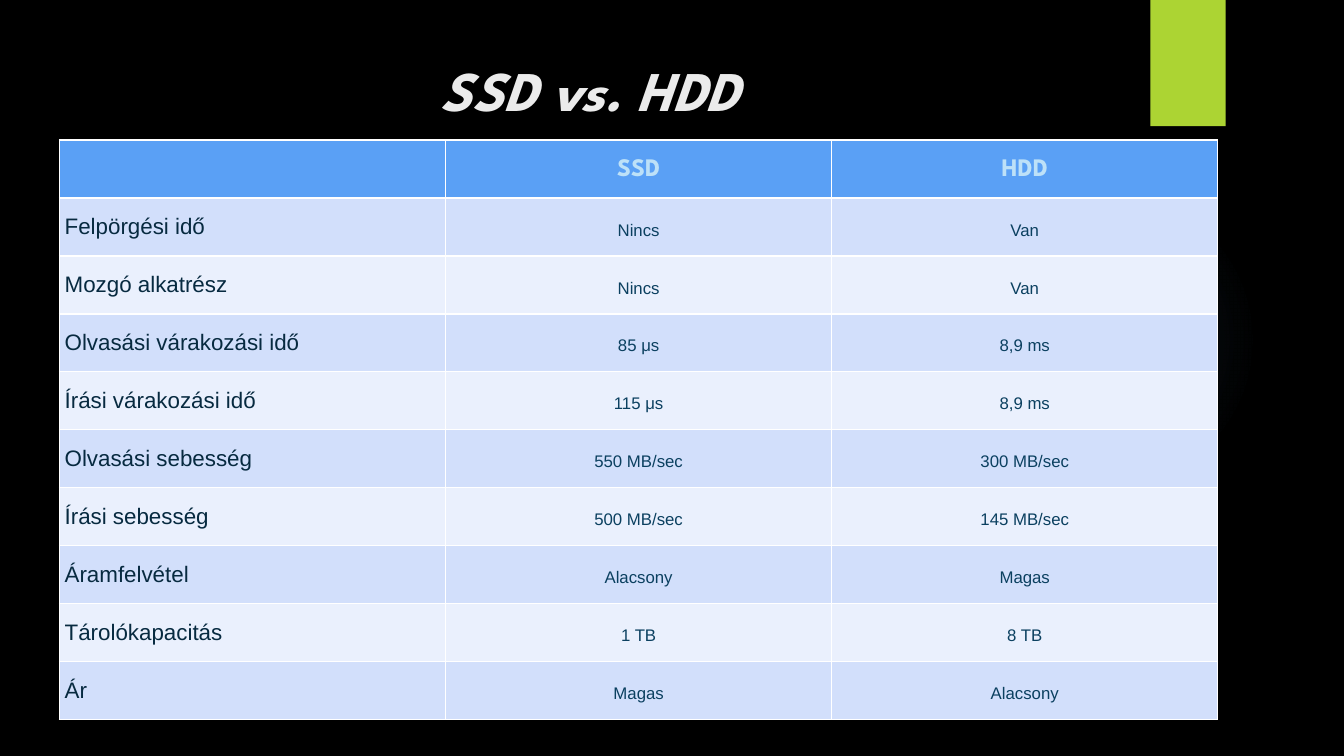
"""Build a slide comparing SSD and HDD drives in a table."""
from lxml import etree
from pptx import Presentation
from pptx.dml.color import RGBColor
from pptx.enum import shapes, text
from pptx.oxml import ns
from pptx.util import Cm, Pt

TITLE = "SSD vs. HDD"
HEADINGS = ("", "SSD", "HDD")
COMPARISON = [
    ("Felpörgési idő", "Nincs", "Van"),
    ("Mozgó alkatrész", "Nincs", "Van"),
    ("Olvasási várakozási idő", "85 μs", "8,9 ms"),
    ("Írási várakozási idő", "115 μs", "8,9 ms"),
    ("Olvasási sebesség", "550 MB/sec", "300 MB/sec"),
    ("Írási sebesség", "500 MB/sec", "145 MB/sec"),
    ("Áramfelvétel", "Alacsony", "Magas"),
    ("Tárolókapacitás", "1 TB", "8 TB"),
    ("Ár", "Magas", "Alacsony"),
]
GLOW_STOPS = [(0, 7), (36, 6), (69, 0)]
BANDS = ("D2DFFB", "EAF0FD")
COLUMN_WIDTH, ROW_HEIGHT, CELL_INSET = Cm(9.73), Cm(1.46), Cm(0.13)


def paint(fill, color):
    """Fill with one solid colour."""
    fill.solid()
    fill.fore_color.rgb = RGBColor.from_string(color)


def write(frame, words, *, size, color, font="Arial", bold=False, italic=False,
          align=text.PP_ALIGN.CENTER, spacing=None):
    """Put formatted text into a text frame."""
    paragraph = frame.paragraphs[0]
    paragraph.alignment = align
    paragraph.line_spacing = spacing
    run = paragraph.add_run()
    run.text = words
    run.font.name, run.font.size = font, Pt(size)
    run.font.bold, run.font.italic = bold, italic
    run.font.color.rgb = RGBColor.from_string(color)


def add_decor(slide, kind, left, top, width, height, color):
    """Add a plain shape without line or shadow."""
    decor = slide.shapes.add_shape(kind, Cm(left), Cm(top), Cm(width), Cm(height))
    decor.shadow.inherit = False
    decor.line.fill.background()
    paint(decor.fill, color)
    return decor


def fade(glow, color):
    """Give a shape a radial gradient that fades out."""
    solid = glow.element.spPr.find(ns.qn("a:solidFill"))
    gradient = etree.Element(ns.qn("a:gradFill"))
    stops = etree.SubElement(gradient, ns.qn("a:gsLst"))
    for position, opacity in GLOW_STOPS:
        stop = etree.SubElement(stops, ns.qn("a:gs"), pos=str(position * 1000))
        tint = etree.SubElement(stop, ns.qn("a:srgbClr"), val=color)
        etree.SubElement(tint, ns.qn("a:alpha"), val=str(opacity * 1000))
    circle = etree.SubElement(gradient, ns.qn("a:path"), path="circle")
    etree.SubElement(circle, ns.qn("a:fillToRect"),
                     dict.fromkeys("ltrb", "50000"))
    solid.getparent().replace(solid, gradient)


def add_comparison(slide):
    """Add the table with its heading row and banded rows."""
    rows = [HEADINGS, *COMPARISON]
    table = slide.shapes.add_table(
        len(rows), len(HEADINGS), Cm(1.5), Cm(3.53),
        COLUMN_WIDTH * len(HEADINGS), ROW_HEIGHT * len(rows)).table
    for column in table.columns:
        column.width = COLUMN_WIDTH
    for r, row in enumerate(rows):
        table.rows[r].height = ROW_HEIGHT
        for c, words in enumerate(row):
            cell = table.cell(r, c)
            paint(cell.fill, BANDS[(r - 1) % 2] if r else "5AA0F5")
            cell.vertical_anchor = text.MSO_ANCHOR.MIDDLE
            cell.margin_left = cell.margin_right = CELL_INSET
            cell.margin_top = cell.margin_bottom = CELL_INSET
            if r == 0:
                look = dict(size=18, color="BDE1F8", font="League Spartan", bold=True)
            elif c == 0:
                look = dict(size=16, color="072A40", align=text.PP_ALIGN.LEFT)
            else:
                look = dict(size=12, color="0B4060")
            if words:
                write(cell.text_frame, words, spacing=Pt(18), **look)


def main():
    """Assemble and save the slide."""
    deck = Presentation()
    deck.slide_width, deck.slide_height = Cm(33.87), Cm(19.05)
    slide = deck.slides.add_slide(deck.slide_layouts[5])
    paint(slide.background.fill, "000000")

    glow = add_decor(slide, shapes.MSO_SHAPE.OVAL, 23.9, 4.65, 7.82, 7.82, "7AC4F0")
    fade(glow, "7AC4F0")
    add_decor(slide, shapes.MSO_SHAPE.RECTANGLE, 28.99, 0, 1.9, 3.18, "ACD433")

    title = slide.shapes.title
    title.left, title.top, title.width, title.height = Cm(1.8), Cm(1.27), Cm(26.14), Cm(3.89)
    title.text_frame.vertical_anchor = text.MSO_ANCHOR.TOP
    write(title.text_frame, TITLE, size=40, color="EBEBEB",
          font="League Spartan", bold=True, italic=True)

    add_comparison(slide)
    deck.save("out.pptx")


if __name__ == "__main__":
    main()
